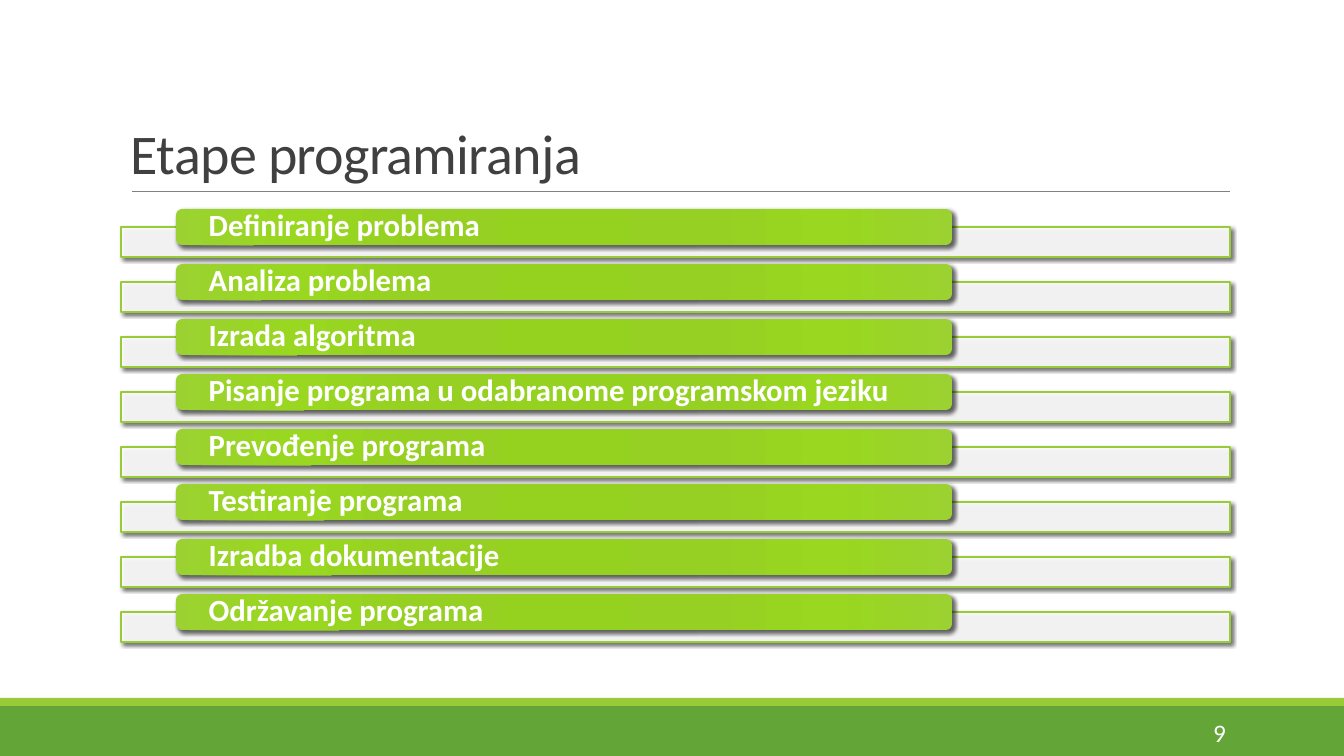
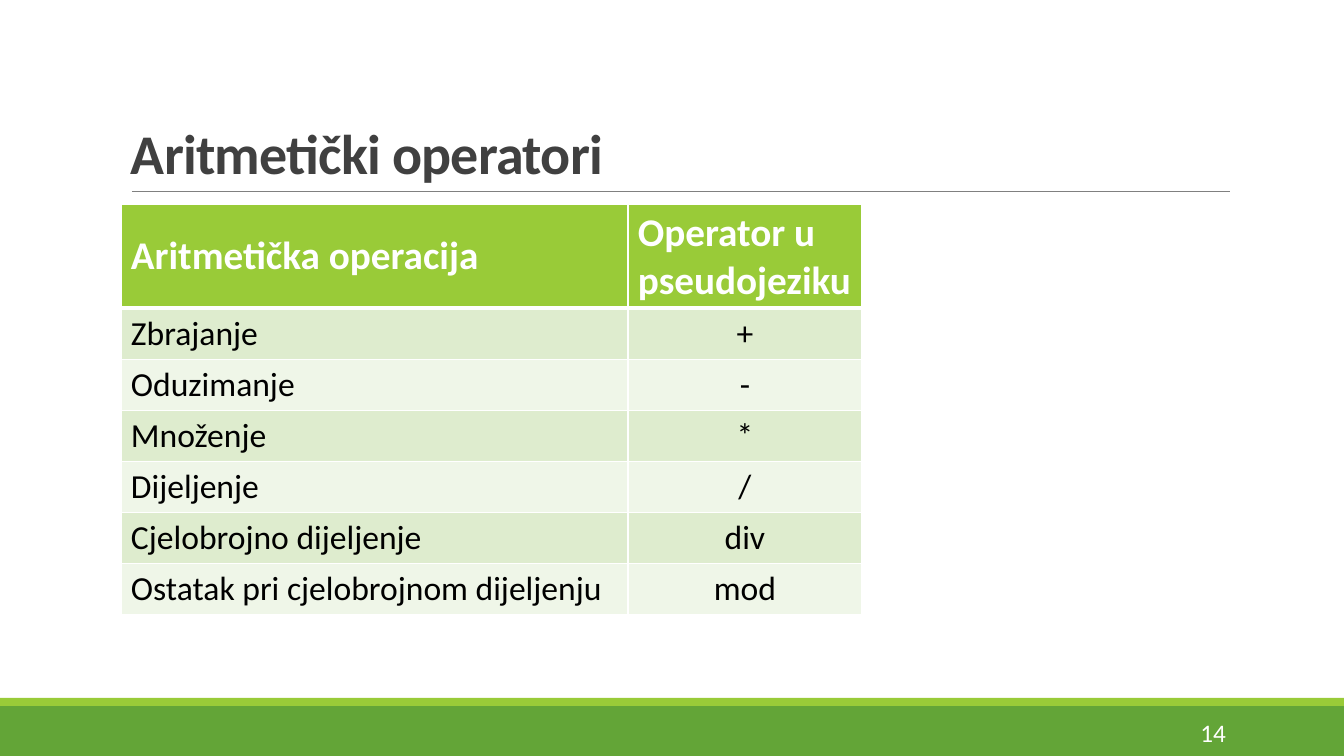
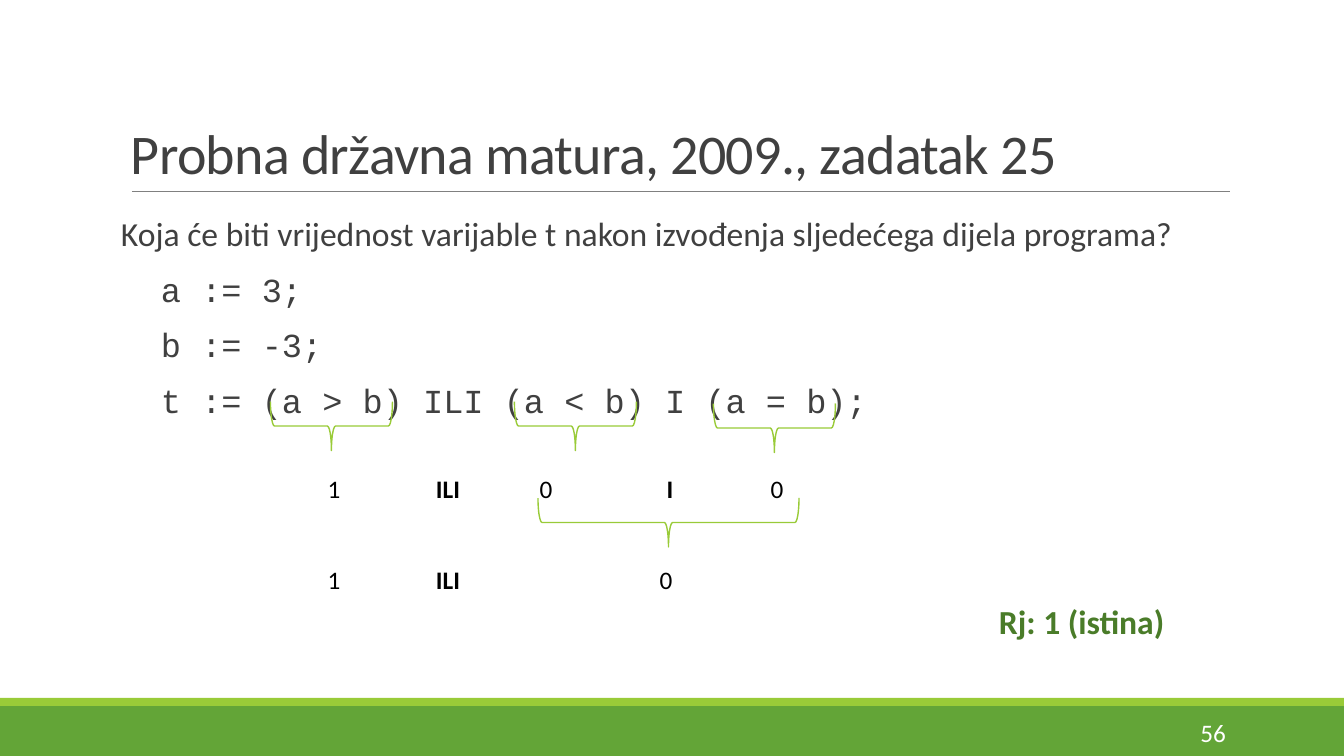
"""Build three programming lesson slides: stages, arithmetic operators and a solved task."""
from pptx import Presentation
from pptx.dml.color import RGBColor as Rgb
from pptx.enum.shapes import MSO_CONNECTOR as Connector, MSO_SHAPE as Preset
from pptx.enum.text import MSO_ANCHOR as Anchor, PP_ALIGN as Align
from pptx.oxml import parse_xml
from pptx.oxml.ns import nsdecls, qn
from pptx.util import Pt

PX = 9072
COLORS = {
    "band": "63A537", "accent": "99CB38", "rule": "808080", "title": "404040",
    "white": "FFFFFF", "black": "000000", "answer": "4A7C29",
    "row_dark": "DEECCE", "row_light": "EFF6E8",
}
GRADIENT = {0: "95D220", 34: "96D023", 70: "99D720", 100: "9BD231"}
SHADOW = (
    f'<a:outerShdw {nsdecls("a")} blurRad="38100" dist="25400" dir="2700000">'
    f'<a:srgbClr val="{COLORS["black"]}"><a:alpha val="60000"/></a:srgbClr></a:outerShdw>'
)


def draw_shape(slide, preset, bounds, fill=None, line=None, shadow=False):
    """Draw a preset shape, or a text box when preset is None, with bounds in px."""
    left, top, width, height = [value * PX for value in bounds]
    if preset is None:
        return slide.shapes.add_textbox(left, top, width, height)
    shape = slide.shapes.add_shape(preset, left, top, width, height)
    shape.shadow.inherit = False
    if fill:
        shape.fill.solid()
        shape.fill.fore_color.rgb = Rgb.from_string(COLORS[fill])
    else:
        shape.fill.background()
    if line:
        shape.line.color.rgb = Rgb.from_string(COLORS[line])
        shape.line.width = Pt(1)
    else:
        shape.line.fill.background()
    if shadow:
        shape._element.spPr.find(qn("a:effectLst")).append(parse_xml(SHADOW))
    return shape


def write_text(frame, text, size=18, color="black", bold=False, font="Calibri",
               align=Align.LEFT, anchor=Anchor.TOP, insets=(10, 5, 10, 5), spacing=None,
               before=0, after=0, indent=0, tracking=0):
    """Add one formatted paragraph to a text frame."""
    frame.word_wrap = True
    frame.vertical_anchor = anchor
    frame.margin_left, frame.margin_top, frame.margin_right, frame.margin_bottom = [
        inset * PX for inset in insets]
    paragraph = frame.add_paragraph() if frame.text else frame.paragraphs[0]
    paragraph.alignment = align
    paragraph.line_spacing = spacing
    paragraph.space_before, paragraph.space_after = Pt(before), Pt(after)
    paragraph._p.get_or_add_pPr().set("marL", str(indent * PX))
    run = paragraph.add_run()
    run.text = text
    run.font.name, run.font.size, run.font.bold = font, Pt(size), bold
    run.font.color.rgb = Rgb.from_string(COLORS[color])
    if tracking:
        run._r.get_or_add_rPr().set("spc", str(tracking))


presentation = Presentation()
presentation.slide_width, presentation.slide_height = 1344 * PX, 756 * PX

slides = []
for title, number, bold in [
    ("Etape programiranja", "9", False),
    ("Aritmetički operatori", "14", True),
    ("Probna državna matura, 2009., zadatak 25", "56", False),
]:
    slide = presentation.slides.add_slide(presentation.slide_layouts[6])
    draw_shape(slide, Preset.RECTANGLE, (0, 706, 1344, 50), fill="band")
    draw_shape(slide, Preset.RECTANGLE, (0, 698, 1344, 8), fill="accent")
    rule = slide.shapes.add_connector(
        Connector.STRAIGHT, 132 * PX, 191 * PX, 1230 * PX, 191 * PX)
    rule.line.color.rgb = Rgb.from_string(COLORS["rule"])
    rule.line.width = Pt(0.5)
    rule._element.spPr.append(parse_xml(f'<a:effectLst {nsdecls("a")}/>'))
    title_box = draw_shape(slide, None, (121, 31, 1109, 160))
    write_text(title_box.text_frame, title, size=40, color="title", bold=bold,
               anchor=Anchor.BOTTOM, spacing=0.85, tracking=-50)
    number_box = draw_shape(slide, None, (1092, 712, 144, 40))
    write_text(number_box.text_frame, number, color="white",
               align=Align.RIGHT, anchor=Anchor.MIDDLE)
    slides.append(slide)
stages_slide, operators_slide, task_slide = slides

stages = [
    "Definiranje problema", "Analiza problema", "Izrada algoritma",
    "Pisanje programa u odabranome programskom jeziku", "Prevođenje programa",
    "Testiranje programa", "Izradba dokumentacije", "Održavanje programa",
]
stops = "".join(f'<a:gs pos="{position * 1000}"><a:srgbClr val="{color}"/></a:gs>'
                for position, color in GRADIENT.items())
for index, stage in enumerate(stages):
    top = 209 + 55 * index
    track = draw_shape(stages_slide, Preset.RECTANGLE, (121, top + 18, 1109, 30),
                       fill="white", line="accent", shadow=True)
    track_color = track._element.spPr.find(qn("a:solidFill"))[0]
    track_color.append(parse_xml(f'<a:alpha {nsdecls("a")} val="90000"/>'))
    pill = draw_shape(stages_slide, Preset.ROUNDED_RECTANGLE, (176, top, 776, 36),
                      fill="accent", shadow=True)
    properties = pill._element.spPr
    properties.replace(properties.find(qn("a:solidFill")), parse_xml(
        f'<a:gradFill {nsdecls("a")} rotWithShape="1"><a:gsLst>{stops}</a:gsLst>'
        '<a:path path="circle"><a:fillToRect l="100000" t="100000" r="100000" b="100000"/>'
        '</a:path></a:gradFill>'))
    write_text(pill.text_frame, stage, size=22, color="white", bold=True,
               anchor=Anchor.MIDDLE, insets=(31, 0, 31, 0), spacing=0.9)

operators = [
    ("Aritmetička operacija", "Operator u pseudojeziku"),
    ("Zbrajanje", "+"),
    ("Oduzimanje", "-"),
    ("Množenje", "*"),
    ("Dijeljenje", "/"),
    ("Cjelobrojno dijeljenje", "div"),
    ("Ostatak pri cjelobrojnom dijeljenju", "mod"),
]
table = operators_slide.shapes.add_table(
    len(operators), 2, 121 * PX, 204 * PX, 741 * PX, 410 * PX).table
table.horz_banding = False
table.columns[0].width, table.columns[1].width = 507 * PX, 234 * PX
for row, texts in enumerate(operators):
    header = row == 0
    table.rows[row].height = (104 if header else 51) * PX
    fill = "accent" if header else "row_dark" if row % 2 else "row_light"
    for column, text in enumerate(texts):
        cell = table.cell(row, column)
        cell.fill.solid()
        cell.fill.fore_color.rgb = Rgb.from_string(COLORS[fill])
        write_text(cell.text_frame, text, size=28 if header else 24,
                   color="white" if header else "black", bold=header,
                   align=Align.CENTER if column and not header else Align.LEFT)
        cell.vertical_anchor = Anchor.MIDDLE if header or column else Anchor.TOP
        cell.margin_left = cell.margin_right = 10 * PX
        cell.margin_top = cell.margin_bottom = 5 * PX
        for position, side in enumerate(["lnL", "lnR", "lnT", "lnB"]):
            thick = (row, side) in [(0, "lnB"), (1, "lnT")]
            cell._tc.get_or_add_tcPr().insert(position, parse_xml(
                f'<a:{side} {nsdecls("a")} w="{Pt(3 if thick else 1)}"><a:solidFill>'
                f'<a:srgbClr val="{COLORS["white"]}"/></a:solidFill></a:{side}>'))

body = draw_shape(task_slide, None, (121, 204, 1109, 444)).text_frame
body_format = {"size": 24, "color": "title", "insets": (0, 5, 0, 5), "spacing": 1.1, "after": 2}
write_text(body, "Koja će biti vrijednost varijable t nakon izvođenja sljedećega dijela programa?",
           before=12, **body_format)
for code in ["a := 3;", "b := -3;", "t := (a > b) ILI (a < b) I (a = b);"]:
    write_text(body, code, font="Courier New", before=6, indent=40, **body_format)

answer_box = draw_shape(task_slide, None, (989, 596, 340, 50))
write_text(answer_box.text_frame, "Rj: 1 (istina)", size=24, color="answer", bold=True)

for left, top, length in [(307, 365, 122), (551, 365, 122), (750, 367, 122), (644, 392, 261)]:
    brace = draw_shape(task_slide, Preset.LEFT_BRACE, (left, top, 49, length), line="accent")
    brace.rotation = 270

evaluation = {
    468: [("1", 334), ("ILI", 448), ("0", 546), ("I", 670), ("0", 777)],
    559: [("1", 334), ("ILI", 448), ("0", 666)],
}
for top, labels in evaluation.items():
    for label, center in labels:
        label_box = draw_shape(task_slide, None, (center - 30, top, 60, 40))
        write_text(label_box.text_frame, label, bold=label.isalpha(),
                   align=Align.CENTER, insets=(0, 5, 0, 5))

presentation.save("out.pptx")
